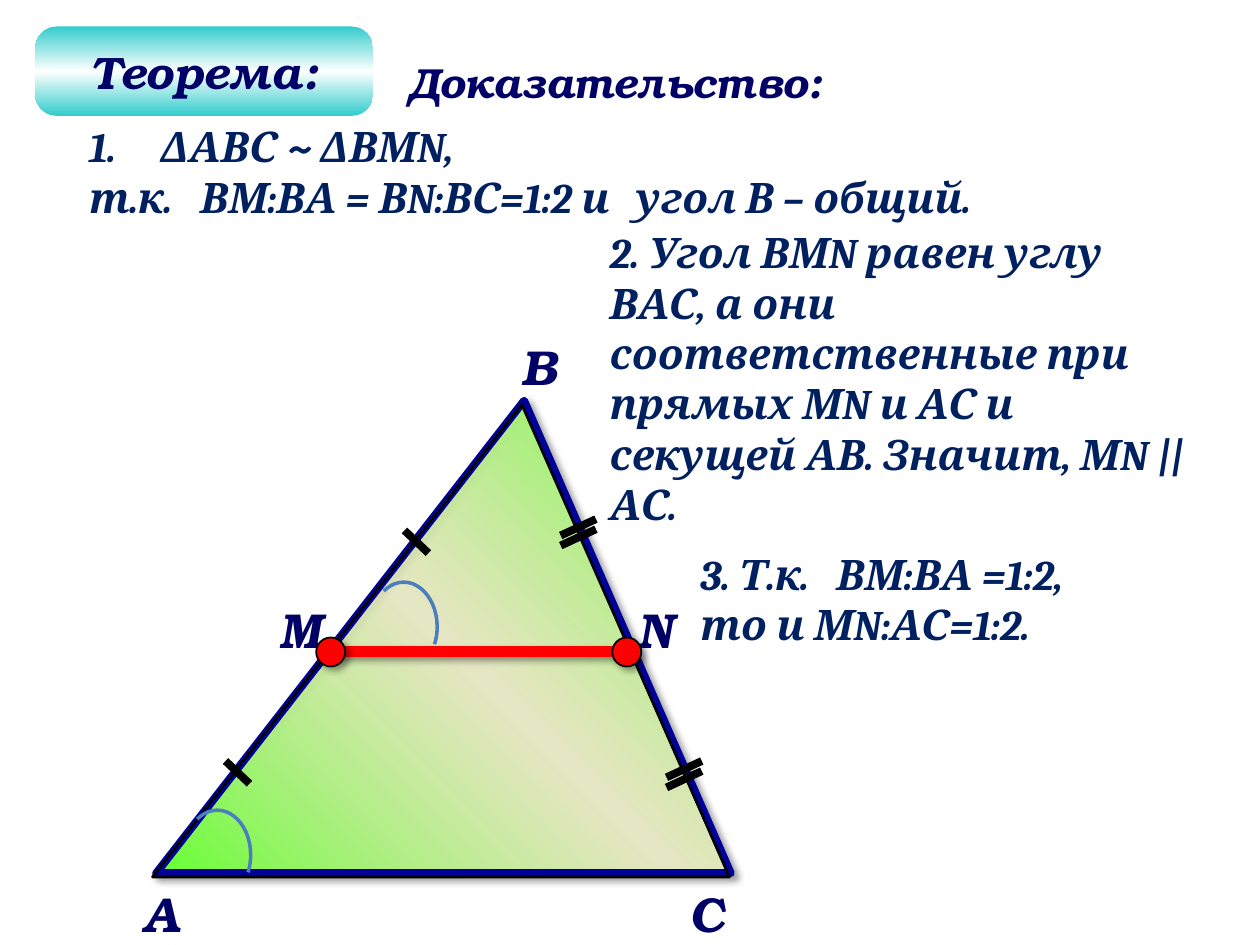
from copy import deepcopy

from lxml import etree
from pptx import Presentation
from pptx.dml.color import RGBColor
from pptx.enum.shapes import MSO_CONNECTOR, MSO_SHAPE
from pptx.enum.text import MSO_ANCHOR, MSO_AUTO_SIZE, PP_ALIGN
from pptx.oxml.ns import qn
from pptx.util import Inches, Pt

STRAIGHT = MSO_CONNECTOR.STRAIGHT
TRIANGLE, OVAL = MSO_SHAPE.ISOSCELES_TRIANGLE, MSO_SHAPE.OVAL
ROUNDED, ARC = MSO_SHAPE.ROUNDED_RECTANGLE, MSO_SHAPE.ARC
GROW, MIDDLE, CENTER = MSO_AUTO_SIZE.SHAPE_TO_FIT_TEXT, MSO_ANCHOR.MIDDLE, PP_ALIGN.CENTER

INK = RGBColor(0x00, 0x00, 0x66)
NAVY = RGBColor(0x00, 0x20, 0x60)
BLUE = RGBColor(0x00, 0x00, 0x99)
ARC_BLUE = RGBColor(0x4B, 0x7E, 0xBC)
GREEN = RGBColor(0x66, 0xFF, 0x33)
CREAM = RGBColor(0xFF, 0xFF, 0xC5)
TEAL = RGBColor(0x33, 0xCC, 0xCC)
WHITE = RGBColor(0xFF, 0xFF, 0xFF)
RED = RGBColor(0xFF, 0x00, 0x00)
BLACK = RGBColor(0x00, 0x00, 0x00)

TITLE = {"name": "TeX Gyre Bonum", "size": Pt(24), "bold": True, "italic": True}
LABEL = {**TITLE, "size": Pt(28)}
BANNER = {**TITLE, "size": Pt(26)}
PROOF = {**TITLE, "name": "Cambria"}


def outline(shape, color, width, shadow=False):
    """Set the line and leave either no shadow or a soft one."""
    shape.line.color.rgb = color
    shape.line.width = Pt(width)
    effects = etree.SubElement(shape._element.spPr, qn("a:effectLst"))
    if shadow:
        outer = etree.SubElement(effects, qn("a:outerShdw"), blurRad=str(Pt(4)),
                                 dist=str(Pt(3)), dir="2700000", algn="tl", rotWithShape="0")
        tone = etree.SubElement(outer, qn("a:srgbClr"), val="000000")
        etree.SubElement(tone, qn("a:alpha"), val="40000")


def write(para, text, style, color):
    para.text = text
    for key, value in style.items():
        setattr(para.font, key, value)
    para.font.color.rgb = color


deck = Presentation()
deck.slide_width, deck.slide_height = Inches(10), Inches(7.5)
page = deck.slides.add_slide(deck.slide_layouts[6])
shapes = page.shapes

# Triangle ABC with its black outline
builder = shapes.build_freeform(Inches(5.8), Inches(6.93))
builder.add_line_segments([(Inches(4.16), Inches(3.18)), (Inches(1.24), Inches(6.93))])
triangle = builder.convert_to_shape()

# Banner
banner = shapes.add_shape(ROUNDED, Inches(0.28), Inches(0.21), Inches(2.68), Inches(0.71))
banner.adjustments[0] = 0.25
banner.shadow.inherit = False
banner.line.fill.background()
banner.text_frame.word_wrap = False
banner.text_frame.vertical_anchor = MIDDLE
write(banner.text_frame.paragraphs[0], "Теорема:", BANNER, INK)
banner.text_frame.paragraphs[0].alignment = CENTER

# Three-stop gradients
for shape, edge, middle, angle in ((triangle, GREEN, CREAM, 45), (banner, TEAL, WHITE, 270)):
    shape.fill.gradient()
    shape.fill.gradient_angle = angle
    first = shape._element.spPr.find(".//" + qn("a:gs"))
    first.addnext(deepcopy(first))
    stops = zip(shape.fill.gradient_stops, (edge, middle, edge), (0, 0.5, 1))
    for stop, color, position in stops:
        stop.color.rgb = color
        stop.position = position
cream = triangle._element.spPr.findall(".//" + qn("a:gs"))[1][0]
etree.SubElement(cream, qn("a:alpha"), val="59000")
outline(triangle, BLUE, 4.5, shadow=True)

edges = shapes.add_shape(TRIANGLE, Inches(1.21), Inches(3.21), Inches(4.58), Inches(3.75))
edges.adjustments[0] = 0.64
edges.fill.background()
outline(edges, BLACK, 1.5)

# Midline MN
midline = shapes.add_connector(STRAIGHT, Inches(2.6), Inches(5.17), Inches(4.98), Inches(5.17))
outline(midline, RED, 6, shadow=True)

# Vertex labels and heading
captions = [
    ("Доказательство:", 3.14, 0.4, 3.55, 0.5, TITLE),
    ("А", 1.04, 6.96, 0.5, 0.57, LABEL),
    ("B", 4.04, 2.62, 0.67, 0.57, LABEL),
    ("C", 5.37, 6.96, 0.49, 0.57, LABEL),
    ("М", 2.12, 4.71, 0.54, 0.57, LABEL),
    ("N", 4.96, 4.71, 0.49, 0.57, LABEL),
]
for text, left, top, width, height, style in captions:
    box = shapes.add_textbox(Inches(left), Inches(top), Inches(width), Inches(height))
    box.text_frame.word_wrap = width > 0.6
    box.text_frame.auto_size = GROW
    write(box.text_frame.paragraphs[0], text, style, INK)

# Marks of equal segments: single on AB, double on BC
ticks = [(left, top, 0.19, 0.18) for left, top in ((3.21, 4.21), (1.79, 6.04))]
ticks += [(left, top + gap, -0.28, 0.13)
          for left, top in ((5.57, 6.04), (4.73, 4.12)) for gap in (0, 0.08)]
for left, top, across, down in ticks:
    tick = shapes.add_connector(STRAIGHT, Inches(left), Inches(top),
                                Inches(left + across), Inches(top + down))
    outline(tick, BLACK, 4.5)

# Points M and N
for left in (2.51, 4.86):
    point = shapes.add_shape(OVAL, Inches(left), Inches(5.06), Inches(0.23), Inches(0.23))
    point.fill.solid()
    point.fill.fore_color.rgb = RED
    outline(point, BLACK, 1, shadow=True)

# Equal angles at A and M
for left, top in ((1.46, 6.43), (2.94, 4.62)):
    angle_mark = shapes.add_shape(ARC, Inches(left), Inches(top), Inches(0.53), Inches(0.71))
    angle_mark.adjustments[0] = 144.46
    angle_mark.adjustments[1] = 17.73
    angle_mark.fill.background()
    outline(angle_mark, ARC_BLUE, 2)

# Proof steps: each line has its text, tab stops and whether it is numbered
steps = [
    (0.61, 0.91, 8.49, 0.91, [
        ("ΔАВС ~ ΔВМN,", (), True),
        ("т.к.\tВМ:ВА = ВN:ВС=1:2 и\tугол В – общий.", (0.88, 4.34), False)]),
    (4.74, 1.75, 4.78, 2.52, [
        ("2. Угол ВМN равен углу ВАС, а они соответственные при прямых МN и АС "
         "и секущей АВ. Значит, МN || АС.", (), False)]),
    (5.46, 4.3, 4.06, 0.91, [
        ("3. Т.к.\tВМ:ВА =1:2,\vто и МN:АС=1:2.", (1.08,), False)]),
]
for left, top, width, height, lines in steps:
    box = shapes.add_textbox(Inches(left), Inches(top), Inches(width), Inches(height))
    frame = box.text_frame
    frame.word_wrap = True
    frame.auto_size = GROW
    for index, (text, tabs, numbered) in enumerate(lines):
        para = frame.add_paragraph() if index else frame.paragraphs[0]
        layout = para._p.get_or_add_pPr()
        if numbered:
            layout.set("marL", str(Inches(0.56)))
            layout.set("indent", str(Inches(-0.56)))
            etree.SubElement(layout, qn("a:buFont"), typeface="+mj-lt")
            etree.SubElement(layout, qn("a:buAutoNum"), type="arabicPeriod")
        if tabs:
            tab_list = etree.SubElement(layout, qn("a:tabLst"))
            for position in tabs:
                etree.SubElement(tab_list, qn("a:tab"), pos=str(Inches(position)), algn="l")
        write(para, text, PROOF, NAVY)

deck.save("out.pptx")
